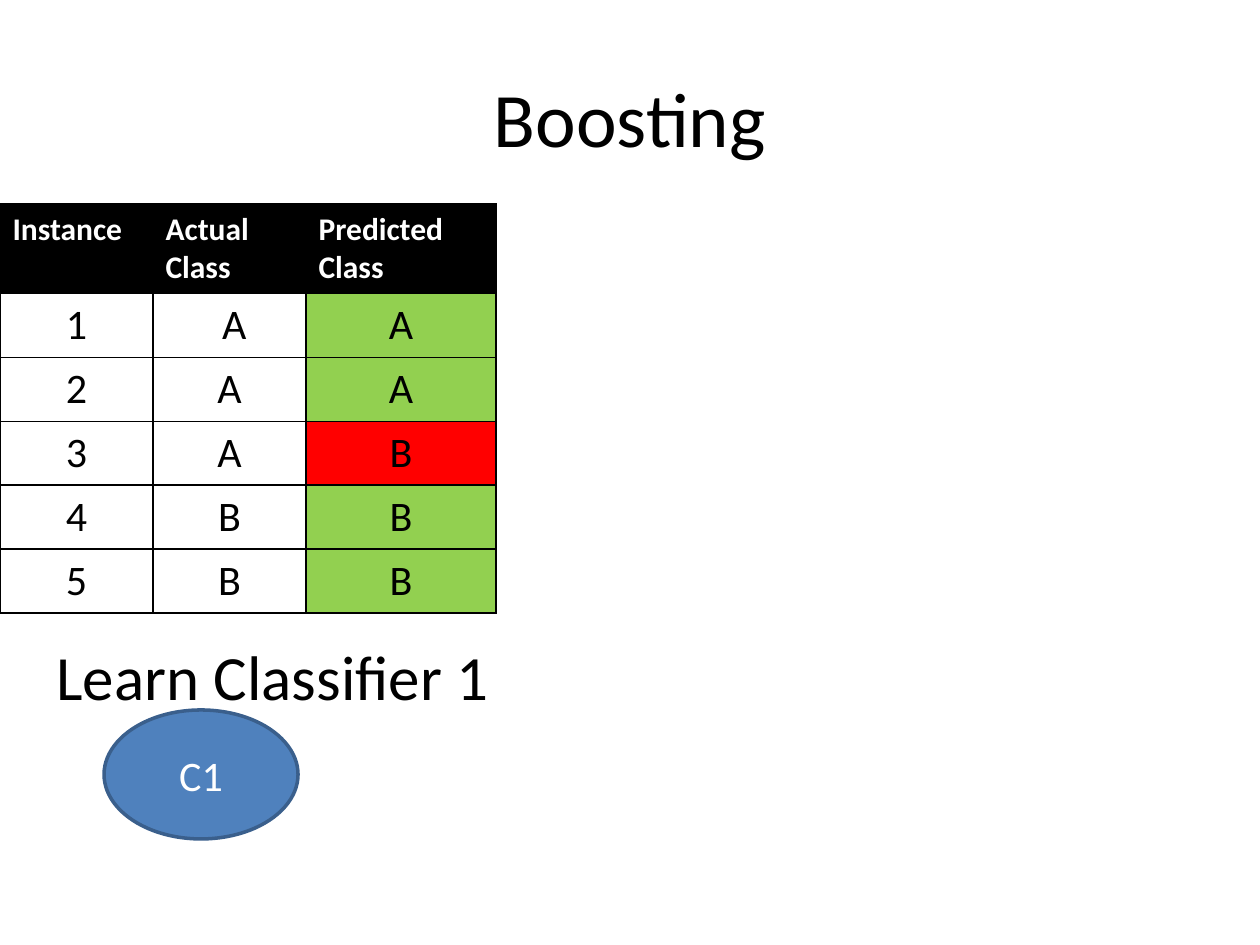
from lxml.etree import SubElement
from pptx import Presentation
from pptx.dml.color import RGBColor
from pptx.enum.shapes import MSO_SHAPE as Shape
from pptx.enum.text import MSO_ANCHOR as Anchor, MSO_AUTO_SIZE as Fit, PP_ALIGN as Align
from pptx.oxml.ns import qn
from pptx.util import Emu, Pt

SCALE = 914400 / 126  # EMU in one px
BLACK = RGBColor(0x00, 0x00, 0x00)
WHITE = RGBColor(0xFF, 0xFF, 0xFF)
GREEN = RGBColor(0x92, 0xD0, 0x50)
RED = RGBColor(0xFF, 0x00, 0x00)
BLUE = RGBColor(0x4F, 0x81, 0xBD)
EDGE = RGBColor(0x3A, 0x5F, 0x8C)

HEADS = ["Instance", "Actual Class", "Predicted Class"]
ROWS = [("1", " A", "A"), ("2", "A", "A"), ("3", "A", "B"),
        ("4", "B", "B"), ("5", "B", "B")]
WIDTHS = [153, 153, 190]
ROW = 52


def px(n):
    return Emu(round(n * SCALE))


def write(frame, text, size, color, align=Align.LEFT, bold=False):
    frame.text = text
    para = frame.paragraphs[0]
    para.alignment = align
    font = para.font
    font.name, font.size, font.bold = "Calibri", Pt(size), bold
    font.color.rgb = color


def border(cell):
    props = cell._tc.get_or_add_tcPr()
    for side in ("lnL", "lnR", "lnT", "lnB"):
        line = SubElement(props, qn(f"a:{side}"), w=str(Pt(1)))
        fill = SubElement(line, qn("a:solidFill"))
        SubElement(fill, qn("a:srgbClr"), val=str(BLACK))


def paint(cell, color):
    border(cell)
    cell.fill.solid()
    cell.fill.fore_color.rgb = color


def add_title(slide, x, y, w, h):
    title = slide.shapes.title
    title.left, title.top, title.width, title.height = map(px, (x, y, w, h))
    title.text_frame.vertical_anchor = Anchor.MIDDLE
    write(title.text_frame, "Boosting", 44, BLACK, Align.CENTER)


def add_grid(slide, x, y):
    count = len(ROWS) + 1
    grid = slide.shapes.add_table(count, len(HEADS), px(x), px(y),
                                  px(sum(WIDTHS)), px(ROW * count)).table
    for col, width in zip(grid.columns, WIDTHS):
        col.width = px(width)
    # Header row
    for c, head in enumerate(HEADS):
        cell = grid.cell(0, c)
        paint(cell, BLACK)
        write(cell.text_frame, head, 18, WHITE, bold=True)
    # Body: the last column shows whether the prediction is right
    for r, row in enumerate(ROWS, 1):
        hit = row[1].strip() == row[2]
        for c, (text, fill) in enumerate(zip(row, (WHITE, WHITE, GREEN if hit else RED))):
            cell = grid.cell(r, c)
            paint(cell, fill)
            write(cell.text_frame, text, 24, BLACK, Align.CENTER)


def add_step(slide, x, y, w, h):
    # Caption
    box = slide.shapes.add_textbox(px(x), px(y), px(w), px(h))
    box.text_frame.word_wrap = False
    box.text_frame.auto_size = Fit.SHAPE_TO_FIT_TEXT
    write(box.text_frame, "Learn Classifier 1", 36, BLACK)
    # Classifier
    oval = slide.shapes.add_shape(Shape.OVAL, px(x + 60), px(y + 79), px(194), px(129))
    oval.shadow.inherit = False
    oval.fill.solid()
    oval.fill.fore_color.rgb = BLUE
    oval.line.color.rgb = EDGE
    oval.line.width = Pt(2)
    oval.text_frame.vertical_anchor = Anchor.MIDDLE
    write(oval.text_frame, "C1", 24, WHITE, Align.CENTER)


def main():
    deck = Presentation()
    deck.slide_width, deck.slide_height = px(1260), px(945)
    slide = deck.slides.add_slide(deck.slide_layouts[5])
    add_title(slide, 63, 38, 1134, 157)
    add_grid(slide, 0, 204)
    add_step(slide, 44, 631, 462, 90)
    deck.save("out.pptx")


if __name__ == "__main__":
    main()
